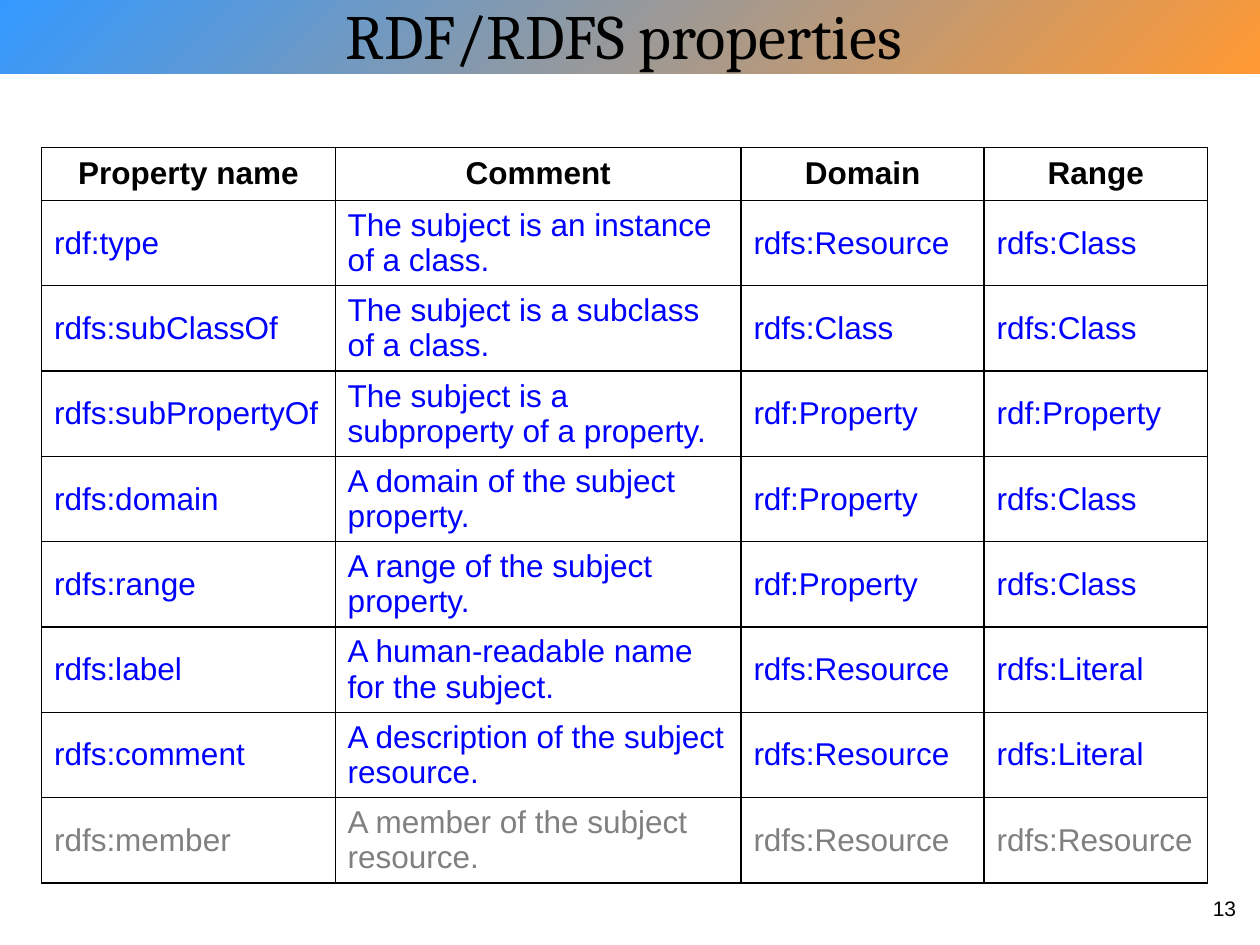
from lxml import etree
from pptx import Presentation
from pptx.dml.color import RGBColor
from pptx.enum.shapes import MSO_SHAPE
from pptx.enum.text import MSO_ANCHOR, MSO_AUTO_SIZE, PP_ALIGN
from pptx.oxml.ns import qn
from pptx.util import Cm, Pt

RECTANGLE = MSO_SHAPE.RECTANGLE
MIDDLE, NO_FIT = MSO_ANCHOR.MIDDLE, MSO_AUTO_SIZE.NONE
LEFT, CENTER, RIGHT = PP_ALIGN.LEFT, PP_ALIGN.CENTER, PP_ALIGN.RIGHT
TITLE_ONLY = 5

THEME = {
    "black": "000000", "white": "FFFFFF", "blue": "0000FF", "grey": "808080",
    "band": ("3399FF", "FF9933"),
    "title": {"name": "Cambria", "size": Pt(36), "bold": False},
    "header": {"name": "Arial", "size": Pt(18), "bold": True},
    "cell": {"name": "Arial", "size": Pt(18), "bold": False},
    "number": {"name": "Arial", "size": Pt(12), "bold": False},
    "border": Pt(1),
}

COLUMN_WIDTHS = [Cm(5.92), Cm(8.18), Cm(4.9), Cm(4.5)]
HEADER_HEIGHT, ROW_HEIGHT = Cm(1.07), Cm(1.72)
ROWS = [
    ("Property name", "Comment", "Domain", "Range"),
    ("rdf:type", "The subject is an instance of a class.", "rdfs:Resource", "rdfs:Class"),
    ("rdfs:subClassOf", "The subject is a subclass of a class.", "rdfs:Class", "rdfs:Class"),
    ("rdfs:subPropertyOf", "The subject is a subproperty of a property.", "rdf:Property", "rdf:Property"),
    ("rdfs:domain", "A domain of the subject property.", "rdf:Property", "rdfs:Class"),
    ("rdfs:range", "A range of the subject property.", "rdf:Property", "rdfs:Class"),
    ("rdfs:label", "A human-readable name for the subject.", "rdfs:Resource", "rdfs:Literal"),
    ("rdfs:comment", "A description of the subject resource.", "rdfs:Resource", "rdfs:Literal"),
    ("rdfs:member", "A member of the subject resource.", "rdfs:Resource", "rdfs:Resource"),
]


def write(frame, text, style, color, align):
    para = frame.paragraphs[0]
    para.alignment = align
    span = para.add_run()
    span.text = text
    for name, value in THEME[style].items():
        setattr(span.font, name, value)
    span.font.color.rgb = RGBColor.from_string(THEME[color])


def draw_borders(cell):
    properties = cell._tc.get_or_add_tcPr()
    for side in ("a:lnL", "a:lnR", "a:lnT", "a:lnB"):
        line = etree.SubElement(properties, qn(side), w=str(THEME["border"]))
        fill = etree.SubElement(line, qn("a:solidFill"))
        etree.SubElement(fill, qn("a:srgbClr"), val=THEME["black"])


deck = Presentation()
deck.slide_width, deck.slide_height = Cm(25.4), Cm(19.05)
page = deck.slides.add_slide(deck.slide_layouts[TITLE_ONLY])

# Title on its gradient band
title = page.shapes.title
title_format = {"left": Cm(6.71), "top": Cm(-0.2), "width": Cm(12.01), "height": Cm(1.78)}
for name, value in title_format.items():
    setattr(title, name, value)
title.text_frame.auto_size = NO_FIT
title.text_frame.vertical_anchor = MIDDLE
write(title.text_frame, "RDF/RDFS properties", "title", "black", LEFT)

band = page.shapes.add_shape(RECTANGLE, 0, 0, deck.slide_width, Cm(1.48))
band.shadow.inherit = False
band.line.fill.background()
band.fill.gradient()
band.fill.gradient_angle = 315
for stop, color in zip(band.fill.gradient_stops, THEME["band"]):
    stop.color.rgb = RGBColor.from_string(color)
title.element.addprevious(band.element)

# Property table
table_height = HEADER_HEIGHT + ROW_HEIGHT * (len(ROWS) - 1)
table = page.shapes.add_table(
    len(ROWS), len(COLUMN_WIDTHS), Cm(0.84), Cm(2.97), sum(COLUMN_WIDTHS), table_height
).table
for column, width in zip(table.columns, COLUMN_WIDTHS):
    column.width = width

cell_format = {
    "margin_left": Cm(0.25), "margin_right": Cm(0.25),
    "margin_top": Cm(0.05), "margin_bottom": Cm(0.05),
    "vertical_anchor": MIDDLE,
}
for row_index, texts in enumerate(ROWS):
    if row_index == 0:
        height, style, color, align = HEADER_HEIGHT, "header", "black", CENTER
    else:
        is_last = row_index == len(ROWS) - 1
        height, style, color, align = ROW_HEIGHT, "cell", "grey" if is_last else "blue", LEFT
    table.rows[row_index].height = height
    for column_index, text in enumerate(texts):
        cell = table.cell(row_index, column_index)
        for name, value in cell_format.items():
            setattr(cell, name, value)
        draw_borders(cell)
        cell.fill.solid()
        cell.fill.fore_color.rgb = RGBColor.from_string(THEME["white"])
        write(cell.text_frame, text, style, color, align)

# Page number
number_box = page.shapes.add_textbox(Cm(24.1), Cm(17.93), Cm(1.07), Cm(1.02))
number_box.text_frame.word_wrap = True
write(number_box.text_frame, "13", "number", "black", RIGHT)

deck.save("out.pptx")
